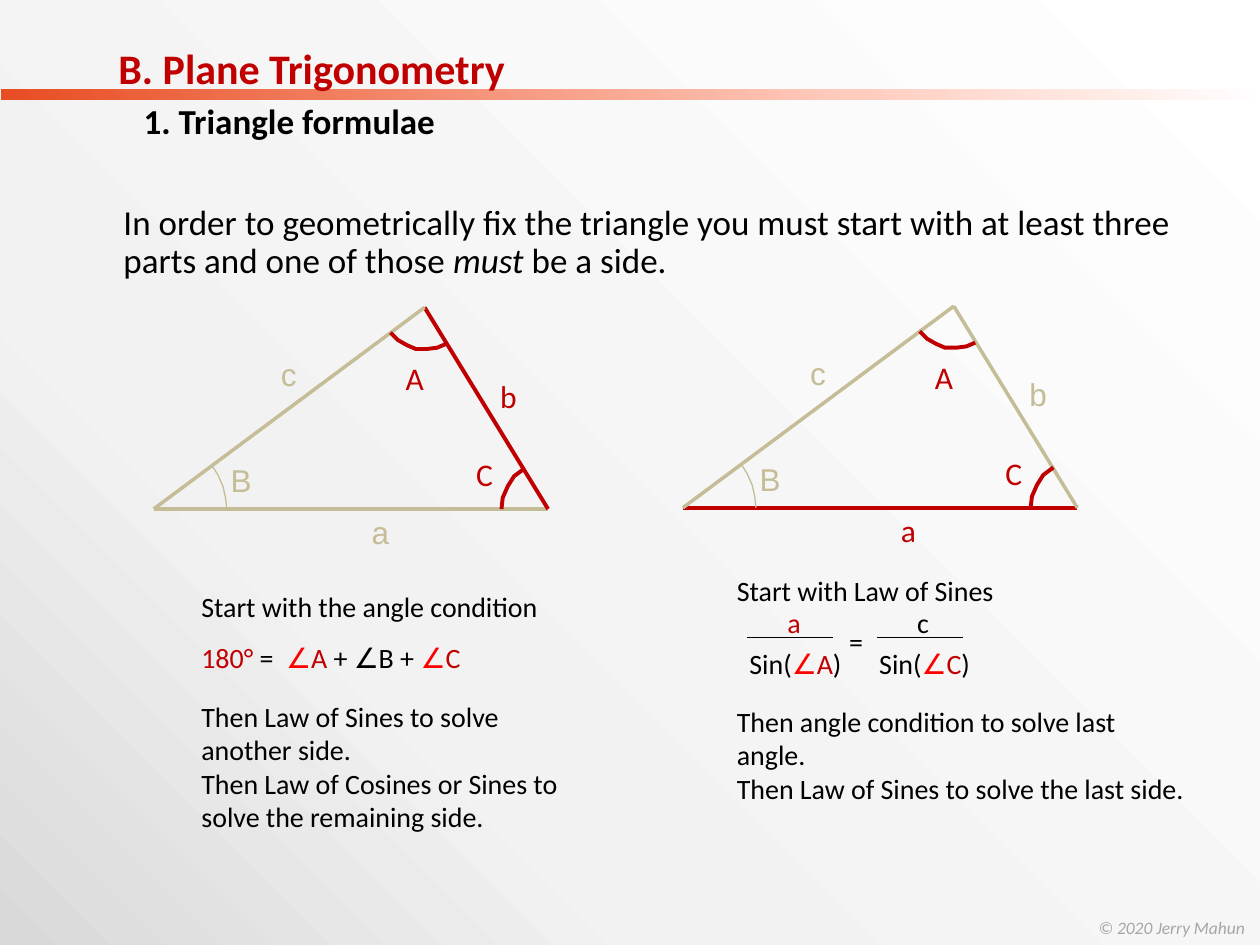
from lxml.etree import SubElement
from pptx import Presentation
from pptx.dml.color import RGBColor
from pptx.enum.shapes import MSO_CONNECTOR as Connector, MSO_SHAPE as Shape
from pptx.enum.text import MSO_ANCHOR as Anchor, MSO_AUTO_SIZE as AutoSize, PP_ALIGN as Align
from pptx.oxml.ns import qn
from pptx.util import Inches, Pt

BLACK, DARK_RED, RED, TAN, GREY = "000000", "C00000", "FF0000", "C4BD97", "A6A6A6"

# Left triangle; the right one is the same, shifted.
CORNERS = {"A": (3.37, 2.44), "B": (1.22, 4.04), "C": (4.35, 4.04)}
SIDES = {"a": "BC", "b": "AC", "c": "AB"}
ARCS = {
    "A": [(3.1, 2.64), (3.16, 2.7), (3.23, 2.74), (3.3, 2.77), (3.39, 2.77), (3.47, 2.76), (3.54, 2.73)],
    "B": [(1.8, 4.04), (1.79, 3.95), (1.77, 3.86), (1.73, 3.77), (1.68, 3.69)],
    "C": [(4.16, 3.72), (4.08, 3.78), (4.03, 3.86), (3.99, 3.95), (3.98, 4.04)],
}
LABELS = {"a": (2.95, 4.07), "b": (3.97, 2.99), "c": (2.23, 2.82),
          "A": (3.22, 2.85), "B": (1.83, 3.66), "C": (3.78, 3.61)}


def color(value):
    return RGBColor.from_string(value)


def set_gradient(fill, element, stops, angle=135):
    """Fill with (percent, colour) stops; the angle runs clockwise."""
    fill.gradient()
    fill.gradient_angle = 360 - angle
    stop_list = next(element.iter(qn("a:gsLst")))
    for old in list(stop_list):
        stop_list.remove(old)
    for percent, value in stops:
        stop = SubElement(stop_list, qn("a:gs"), pos=str(percent * 1000))
        SubElement(stop, qn("a:srgbClr"), val=value)


class Slide:
    def __init__(self, page, font="Calibri"):
        self.page = page
        self.font = font

    def add_spans(self, para, spans, size, font=None, bold=False):
        """Add (text, colour[, italic]) spans as runs."""
        for text, value, *italic in spans:
            span = para.add_run()
            span.text = text
            span.font.name = font or self.font
            span.font.size = Pt(size)
            span.font.bold = bold
            span.font.italic = bool(italic)
            span.font.color.rgb = color(value)

    def text(self, left, top, width, height, paras, size=16, spacing=None, font=None, inset=True):
        box = self.page.shapes.add_textbox(Inches(left), Inches(top), Inches(width), Inches(height))
        frame = box.text_frame
        frame.word_wrap = True
        if not inset:
            frame.margin_left = frame.margin_right = frame.margin_top = frame.margin_bottom = 0
        for index, spans in enumerate(paras):
            para = frame.add_paragraph() if index else frame.paragraphs[0]
            if spacing:
                para.line_spacing = spacing
            self.add_spans(para, spans, size, font)

    def placeholder(self, index, left, top, width, height):
        """Move a placeholder and return its text frame."""
        box = self.page.placeholders[index]
        box.left, box.top, box.width, box.height = map(Inches, (left, top, width, height))
        frame = box.text_frame
        frame.auto_size = AutoSize.NONE
        frame.vertical_anchor = Anchor.TOP
        return frame

    def plain(self, para, indent=0.0, before=0.0):
        """Left-align a placeholder paragraph without bullet."""
        para.alignment = Align.LEFT
        para.space_before = Pt(before)
        props = para._p.get_or_add_pPr()
        props.set("marL", str(Inches(indent)))
        props.set("indent", "0")
        SubElement(props, qn("a:buNone"))

    def line(self, start, end, value=BLACK, width=0.75):
        line = self.page.shapes.add_connector(Connector.STRAIGHT, *map(Inches, start + end))
        line.line.color.rgb = color(value)
        line.line.width = Pt(width)
        SubElement(line._element.spPr, qn("a:effectLst"))

    def arc(self, points, value, width):
        first, *rest = [(Inches(x), Inches(y)) for x, y in points]
        builder = self.page.shapes.build_freeform(*first)
        builder.add_line_segments(rest, close=False)
        arc = builder.convert_to_shape()
        arc.shadow.inherit = False
        arc.fill.background()
        arc.line.color.rgb = color(value)
        arc.line.width = Pt(width)

    def bar(self, left, top, width, height, stops):
        bar = self.page.shapes.add_shape(Shape.RECTANGLE, *map(Inches, (left, top, width, height)))
        bar.shadow.inherit = False
        bar.line.fill.background()
        set_gradient(bar.fill, bar._element, stops)
        self.page.shapes._spTree.insert(2, bar._element)  # behind the title

    def triangle(self, known, dx=0.0, dy=0.0):
        """Draw a triangle whose known parts stand out in red."""
        def shift(point):
            return round(point[0] + dx, 2), round(point[1] + dy, 2)

        def stroke(part):
            return (DARK_RED, 2.25) if part in known else (TAN, 0)

        for side, (start, end) in SIDES.items():
            self.line(shift(CORNERS[start]), shift(CORNERS[end]), *stroke(side))
        for angle, points in ARCS.items():
            self.arc([shift(point) for point in points], *stroke(angle))
        for part, place in LABELS.items():
            font = self.font if part in known else "Arial"
            self.text(*shift(place), 0.3, 0.3, [[(part, stroke(part)[0])]], 18, font=font, inset=False)

    def fraction(self, left, top, side, side_color, angle):
        self.line((left + 0.08, top), (left + 0.76, top))
        self.text(left + 0.3, top - 0.3, 0.4, 0.37, [[(side, side_color)]])
        self.text(left, top + 0.02, 1.1, 0.37,
                  [[("Sin(", BLACK), ("∠", RED), (angle, DARK_RED), (")", BLACK)]])


def main():
    deck = Presentation()
    deck.slide_width, deck.slide_height = Inches(10), Inches(7.5)
    page = deck.slides.add_slide(deck.slide_layouts[1])
    set_gradient(page.background.fill, page._element, [(0, "FFFFFF"), (70, "F2F2F2"), (100, "D9D9D9")])
    slide = Slide(page)
    slide.bar(0.01, 0.71, 10, 0.08, [(0, "FFFFFF"), (33, "FFCBBD"), (100, "E84C22")])
    slide.text(8.62, 7.23, 1.38, 0.27, [[("© ", GREY, True), ("2020 Jerry Mahun", GREY, True)]], 10)

    title = slide.placeholder(0, 0.84, 0.29, 4.81, 1.18)
    heading, subheading = title.paragraphs[0], title.add_paragraph()
    slide.plain(heading)
    slide.add_spans(heading, [("B. Plane Trigonometry", DARK_RED)], 24, bold=True)
    slide.plain(subheading, indent=0.2, before=3.8)
    slide.add_spans(subheading, [("1. Triangle formulae", BLACK)], 20, bold=True)

    statement = slide.placeholder(1, 0.88, 1.58, 8.93, 5.38).paragraphs[0]
    statement.line_spacing = 0.9
    slide.plain(statement)
    slide.add_spans(statement, [
        ("In order to geometrically fix the triangle you must start with at least three parts"
         " and one of those ", BLACK),
        ("must", BLACK, True), (" be a side.", BLACK)], 20)

    slide.triangle("AbC")
    slide.triangle("AaC", dx=4.2, dy=-0.01)

    slide.text(1.5, 4.5, 3.3, 0.91, [
        [("Start with the angle condition", BLACK)],
        [("180° ", DARK_RED), ("=  ", BLACK), ("∠", RED), ("A", DARK_RED),
         (" + ∠B + ", BLACK), ("∠", RED), ("C", DARK_RED)]], spacing=1.5)
    slide.text(1.5, 5.5, 3.22, 1.18, [
        [("Then Law of Sines to solve another side.", BLACK)],
        [("Then Law of Cosines or Sines to solve the remaining side.", BLACK)]])

    slide.text(5.75, 4.5, 2.6, 0.37, [[("Start with Law of Sines", BLACK)]])
    slide.fraction(5.85, 5.06, "a", DARK_RED, "A")
    slide.text(6.64, 4.91, 0.33, 0.37, [[("=", BLACK)]])
    slide.fraction(6.88, 5.06, "c", BLACK, "C")
    slide.text(5.75, 5.54, 3.78, 1.18, [
        [("Then angle condition to solve last angle.", BLACK)],
        [("Then Law of Sines to solve the last side.", BLACK)]])
    deck.save("out.pptx")


if __name__ == "__main__":
    main()
